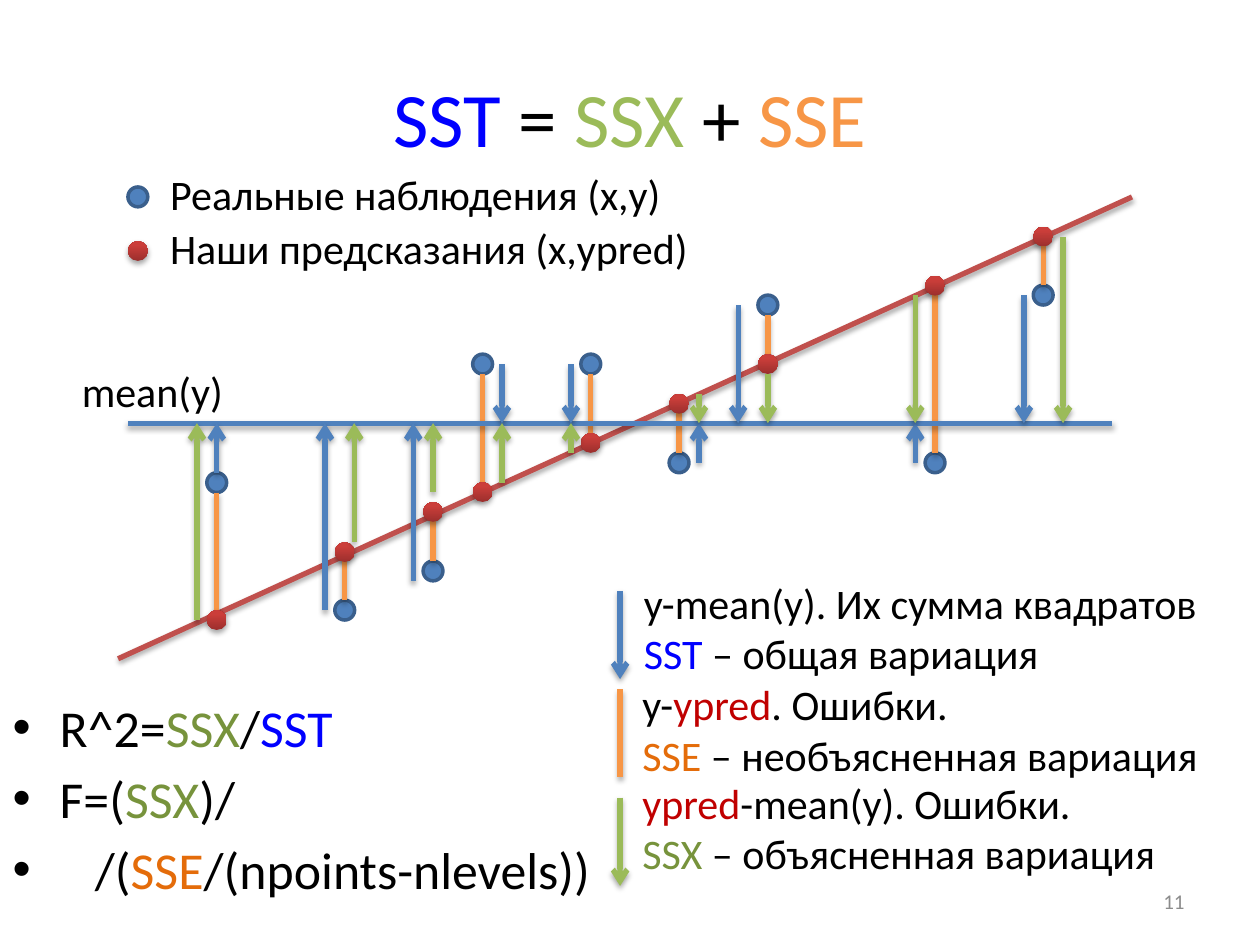
"""Builds the slide on how total variation splits into SSX and SSE."""
import pptx
import pptx.dml.color
import pptx.enum.dml
import pptx.enum.shapes
import pptx.enum.text
import pptx.util
from lxml import etree
from pptx.oxml.ns import qn

Cm = pptx.util.Cm
Pt = pptx.util.Pt
RGBColor = pptx.dml.color.RGBColor
Align = pptx.enum.text.PP_ALIGN
Anchor = pptx.enum.text.MSO_ANCHOR
AutoSize = pptx.enum.text.MSO_AUTO_SIZE

BLACK = RGBColor(0x00, 0x00, 0x00)
GRAY = RGBColor(0x8C, 0x8C, 0x8C)
BRIGHT_BLUE = RGBColor(0x00, 0x00, 0xFF)
BLUE = RGBColor(0x4F, 0x81, 0xBD)
BLUE_EDGE = RGBColor(0x3A, 0x5F, 0x8C)
GREEN = RGBColor(0x9B, 0xBB, 0x59)
DARK_GREEN = RGBColor(0x77, 0x93, 0x3C)
ORANGE = RGBColor(0xF7, 0x96, 0x46)
DARK_ORANGE = RGBColor(0xE4, 0x6C, 0x0A)
RED = RGBColor(0xC0, 0x50, 0x4D)
TEXT_RED = RGBColor(0xC0, 0x00, 0x00)
RED_BOTTOM = RGBColor(0x9C, 0x2F, 0x2D)
RED_TOP = RGBColor(0xCB, 0x3E, 0x3A)

TITLE = [[("SST", BRIGHT_BLUE), (" = ", BLACK), ("SSX", GREEN), (" + ", BLACK), ("SSE", ORANGE)]]
FORMULAS = [
    [("R^2=", BLACK), ("SSX", DARK_GREEN), ("/", BLACK), ("SST", BRIGHT_BLUE)],
    [("F=(", BLACK), ("SSX", DARK_GREEN), (")/", BLACK)],
    [("/(", BLACK), ("SSE", DARK_ORANGE), ("/(npoints-nlevels))", BLACK)],
]
FORMULA_INDENTS = [0.95, 0.95, 1.66]
LABELS = [
    ((3.18, 3.28, 10.52, 1.27), [[("Реальные наблюдения (x,y)", BLACK)]]),
    ((3.18, 4.37, 11.05, 1.27), [[("Наши предсказания (x,ypred)", BLACK)]]),
    ((12.73, 11.51, 11.79, 2.31), [
        [("y-mean(y). Их сумма квадратов", BLACK)],
        [("SST", BRIGHT_BLUE), (" – общая вариация", BLACK)]]),
    ((12.7, 13.56, 11.81, 2.31), [
        [("y-", BLACK), ("ypred", TEXT_RED), (". Ошибки.", BLACK)],
        [("SSE", DARK_ORANGE), (" – необъясненная вариация", BLACK)]]),
    ((12.7, 15.54, 10.95, 2.31), [
        [("ypred", TEXT_RED), ("-mean(y). Ошибки.", BLACK)],
        [("SSX ", DARK_GREEN), ("– объясненная вариация", BLACK)]]),
    ((1.4, 7.24, 3.38, 1.27), [[("mean(y)", BLACK)]]),
]

MEAN_Y = 8.53
RADIUS = 0.2
POINTS = [
    (4.37, 9.73, 12.5), (6.95, 12.3, 11.13), (8.73, 11.51, 10.32),
    (9.73, 7.34, 9.92), (11.91, 7.34, 8.93), (13.69, 9.33, 8.14),
    (15.48, 6.15, 7.34), (18.85, 9.33, 5.76), (21.03, 5.95, 4.77),
]
TOTAL_ARROWS = [
    (4.37, 9.53), (6.55, 12.3), (8.33, 11.71), (10.12, 7.34), (11.51, 7.34),
    (14.09, 9.33), (14.88, 6.15), (18.45, 9.33), (20.64, 5.95),
]
EXPLAINED_ARROWS = [
    (3.97, 12.5), (7.14, 10.92), (8.73, 9.92), (10.12, 9.73), (11.51, 9.13),
    (14.09, 7.94), (15.48, 7.54), (18.45, 5.95), (21.43, 4.77),
]
LEGEND_X = 12.5
LEGEND_HEIGHT = 1.78
LEGEND_LINES = [(11.91, BLUE, True), (13.89, ORANGE, False), (16.08, GREEN, True)]


def write_text(frame, paragraphs, size=24, align=Align.LEFT, anchor=Anchor.TOP,
               wrap=False, fit=AutoSize.NONE, gap=0, indents=()):
    frame.word_wrap = wrap
    frame.auto_size = fit
    frame.vertical_anchor = anchor
    for index, runs in enumerate(paragraphs):
        paragraph = frame.paragraphs[0] if index == 0 else frame.add_paragraph()
        paragraph.alignment = align
        paragraph.space_before = Pt(gap if index else 0)
        if indents:
            properties = paragraph._p.get_or_add_pPr()
            properties.set("marL", str(Cm(indents[index])))
            properties.set("indent", str(-Cm(indents[index])))
        for text, color in runs:
            run = paragraph.add_run()
            run.text = text
            run.font.name = "Calibri"
            run.font.size = Pt(size)
            run.font.color.rgb = color


def add_shadow(shape):
    properties = shape._element.spPr
    effects = properties.find(qn("a:effectLst"))
    if effects is None:
        effects = etree.SubElement(properties, qn("a:effectLst"))
    shadow = etree.SubElement(effects, qn("a:outerShdw"), blurRad=str(Pt(3.1)),
                              dist=str(Pt(1.8)), dir="5400000", rotWithShape="0")
    color = etree.SubElement(shadow, qn("a:srgbClr"), val="000000")
    etree.SubElement(color, qn("a:alpha"), val="35000")


def add_line(slide, start, end, color, arrow=False):
    kind = pptx.enum.shapes.MSO_CONNECTOR.STRAIGHT
    connector = slide.shapes.add_connector(kind, *map(Cm, start + end))
    connector.line.color.rgb = color
    connector.line.width = Pt(3)
    if arrow:
        etree.SubElement(connector.line._get_or_add_ln(), qn("a:tailEnd"), type="arrow")
    add_shadow(connector)


def add_point(slide, x, y, predicted=False):
    shape = slide.shapes.add_shape(pptx.enum.shapes.MSO_SHAPE.OVAL, Cm(x - RADIUS),
                                   Cm(y - RADIUS), Cm(2 * RADIUS), Cm(2 * RADIUS))
    shape.shadow.inherit = False
    if predicted:
        shape.fill.gradient()
        shape.fill.gradient_angle = 90
        bottom, top = shape.fill.gradient_stops
        bottom.color.rgb, bottom.position = RED_BOTTOM, 0
        top.color.rgb, top.position = RED_TOP, 0.8
        shape.line.fill.background()
        add_shadow(shape)
    else:
        shape.fill.solid()
        shape.fill.fore_color.rgb = BLUE
        shape.line.color.rgb = BLUE_EDGE
        shape.line.width = Pt(2)


def place(shape, left, top, width, height):
    shape.left, shape.top, shape.width, shape.height = map(Cm, (left, top, width, height))


def add_plot(slide):
    add_line(slide, (2.38, 13.28), (22.82, 3.97), RED)
    for x, observed, predicted in POINTS:
        add_point(slide, x, observed)
    for x, observed, predicted in POINTS:
        edge = observed + (RADIUS if predicted > observed else -RADIUS)
        add_line(slide, (x, edge), (x, predicted), ORANGE)
    add_line(slide, (2.58, MEAN_Y), (22.42, MEAN_Y), BLUE)
    for x, y in TOTAL_ARROWS:
        add_line(slide, (x, y), (x, MEAN_Y), BLUE, arrow=True)
    for x, observed, predicted in POINTS:
        add_point(slide, x, predicted, predicted=True)
    for x, y in EXPLAINED_ARROWS:
        add_line(slide, (x, y), (x, MEAN_Y), GREEN, arrow=True)


def add_legend(slide):
    for y, color, arrow in LEGEND_LINES:
        add_line(slide, (LEGEND_X, y), (LEGEND_X, y + LEGEND_HEIGHT), color, arrow)
    add_point(slide, 2.78, 5.06, predicted=True)
    add_point(slide, 2.78, 3.97)
    for box, paragraphs in LABELS:
        label = slide.shapes.add_textbox(*map(Cm, box))
        write_text(label.text_frame, paragraphs, fit=AutoSize.SHAPE_TO_FIT_TEXT)


def main():
    presentation = pptx.Presentation()
    presentation.slide_width, presentation.slide_height = Cm(25.4), Cm(19.05)
    slide = presentation.slides.add_slide(presentation.slide_layouts[1])
    title, body = slide.placeholders
    place(title, 1.27, 0.76, 22.86, 3.18)
    write_text(title.text_frame, TITLE, size=44, align=Align.CENTER,
               anchor=Anchor.MIDDLE, wrap=True)
    place(body, 0, 13.9, 22.86, 3.96)
    write_text(body.text_frame, FORMULAS, size=29.6, wrap=True, gap=5,
               indents=FORMULA_INDENTS)
    number = slide.shapes.add_textbox(Cm(18.2), Cm(17.66), Cm(5.93), Cm(1.01))
    write_text(number.text_frame, [[("11", GRAY)]], size=12, align=Align.RIGHT,
               anchor=Anchor.MIDDLE, wrap=True)
    add_plot(slide)
    add_legend(slide)
    presentation.save("out.pptx")


if __name__ == "__main__":
    main()
